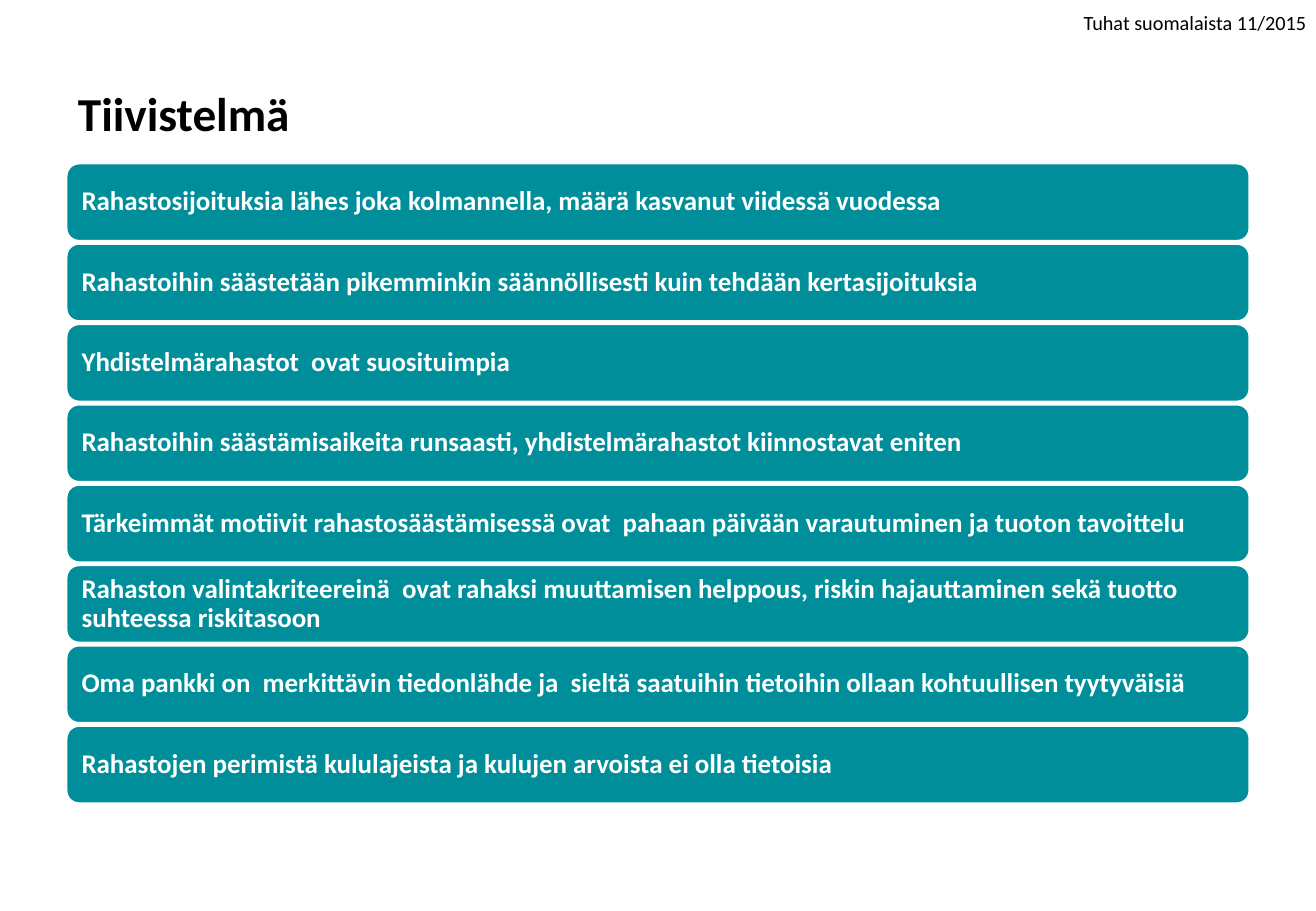
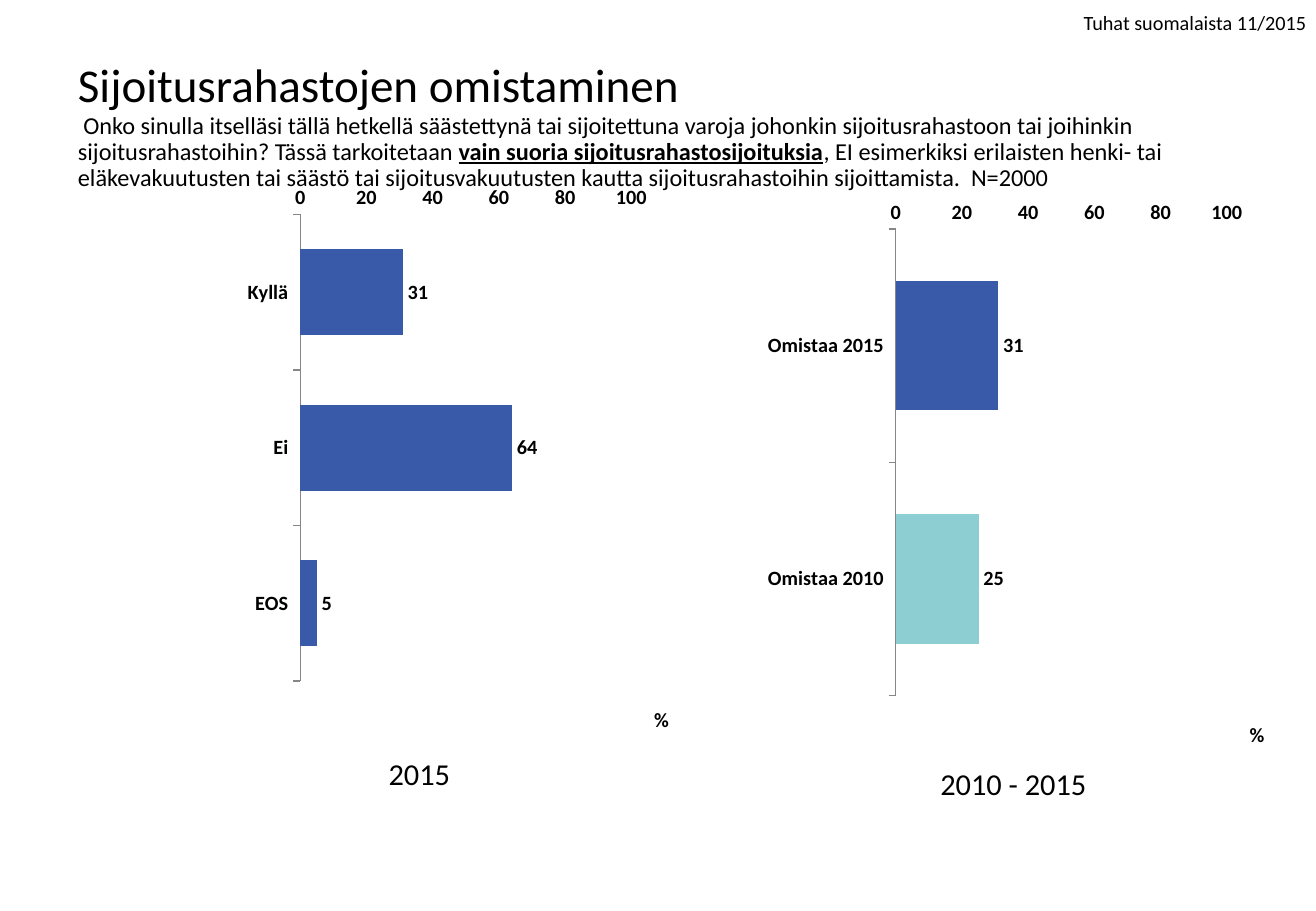
from dataclasses import dataclass

from lxml import etree
from pptx import Presentation
from pptx.chart.data import CategoryChartData
from pptx.dml.color import RGBColor
from pptx.enum.chart import XL_AXIS_CROSSES, XL_CHART_TYPE, XL_LABEL_POSITION, XL_TICK_LABEL_POSITION, XL_TICK_MARK
from pptx.enum.shapes import MSO_SHAPE
from pptx.enum.text import MSO_ANCHOR, MSO_AUTO_SIZE, PP_ALIGN
from pptx.oxml.ns import qn
from pptx.util import Inches, Pt

ROUNDED = MSO_SHAPE.ROUNDED_RECTANGLE
MIDDLE, BOTTOM, LEFT = MSO_ANCHOR.MIDDLE, MSO_ANCHOR.BOTTOM, PP_ALIGN.LEFT
NO_FIT = MSO_AUTO_SIZE.NONE
BAR_CLUSTERED = XL_CHART_TYPE.BAR_CLUSTERED
AXIS_MAXIMUM = XL_AXIS_CROSSES.MAXIMUM
OUTSIDE_END = XL_LABEL_POSITION.OUTSIDE_END
LABELS_LOW = XL_TICK_LABEL_POSITION.LOW
TICK_NONE, TICK_OUT = XL_TICK_MARK.NONE, XL_TICK_MARK.OUTSIDE

FONT = "Calibri"
BLACK, WHITE, GREY = "000000", "FFFFFF", "868686"
TEAL, BLUE, PALE_TEAL = "008F9A", "395AA8", "8DCED2"
TITLE_ONLY = 5

FINDINGS = [
    "Rahastosijoituksia lähes joka kolmannella, määrä kasvanut viidessä vuodessa",
    "Rahastoihin säästetään pikemminkin säännöllisesti kuin tehdään kertasijoituksia",
    "Yhdistelmärahastot  ovat suosituimpia",
    "Rahastoihin säästämisaikeita runsaasti, yhdistelmärahastot kiinnostavat eniten",
    "Tärkeimmät motiivit rahastosäästämisessä ovat  pahaan päivään varautuminen ja tuoton tavoittelu",
    "Rahaston valintakriteereinä  ovat rahaksi muuttamisen helppous, riskin hajauttaminen sekä tuotto "
    "suhteessa riskitasoon",
    "Oma pankki on  merkittävin tiedonlähde ja  sieltä saatuihin tietoihin ollaan kohtuullisen tyytyväisiä",
    "Rahastojen perimistä kululajeista ja kulujen arvoista ei olla tietoisia",
]
QUESTION_START = (
    " Onko sinulla itselläsi tällä hetkellä säästettynä tai sijoitettuna varoja johonkin "
    "sijoitusrahastoon tai joihinkin sijoitusrahastoihin? Tässä tarkoitetaan "
)
QUESTION_END = (
    ", EI esimerkiksi erilaisten henki- tai eläkevakuutusten tai säästö tai sijoitusvakuutusten "
    "kautta sijoitusrahastoihin sijoittamista.  N=2000"
)


@dataclass
class Box:
    """A rectangle whose regions are given in percent of its size."""

    left: int
    top: int
    width: int
    height: int

    def region(self, x, y, width, height):
        """Return the inner rectangle at the given percentages."""
        return Box(
            self.left + round(self.width * x / 100),
            self.top + round(self.height * y / 100),
            round(self.width * width / 100),
            round(self.height * height / 100),
        )

    def edges(self):
        """Return left, top, width and height."""
        return self.left, self.top, self.width, self.height


SLIDE = Box(0, 0, Inches(10.83), Inches(7.5))


def color(code):
    """Turn a hex string into a colour."""
    return RGBColor.from_string(code)


def style_font(font, size, code=BLACK, bold=False):
    """Set the typeface, size, colour and weight."""
    font.name, font.size, font.bold = FONT, Pt(size), bold
    font.color.rgb = color(code)


def add_span(para, text, size, code=BLACK, bold=False, underline=False):
    """Append one formatted run."""
    span = para.add_run()
    span.text = text
    style_font(span.font, size, code, bold)
    if underline:
        span.font.underline = True


def add_label(page, box, text, size, wrap=True):
    """Add a one-line text box."""
    label = page.shapes.add_textbox(*box.edges())
    label.text_frame.word_wrap = wrap
    add_span(label.text_frame.paragraphs[0], text, size)
    return label


def add_page(deck, title_box, anchor):
    """Add a slide and return it with the paragraph of its title."""
    page = deck.slides.add_slide(deck.slide_layouts[TITLE_ONLY])
    title = page.shapes.title
    title.left, title.top, title.width, title.height = title_box.edges()
    frame = title.text_frame
    frame.auto_size, frame.vertical_anchor = NO_FIT, anchor
    para = frame.paragraphs[0]
    para.alignment = LEFT
    return page, para


def add_shared_header(page):
    """Put the header on the layout that all slides use."""
    header = add_label(page, SLIDE.region(81.44, 0.53, 19.02, 4), "Tuhat suomalaista 11/2015", 12, wrap=False)
    page.slide_layout.shapes.element.append(header.element)


def add_findings(page, box, findings):
    """Stack one rounded bar per finding in the box."""
    pitch = 100 / len(findings)
    for row, finding in enumerate(findings):
        bar = page.shapes.add_shape(ROUNDED, *box.region(0, row * pitch, 100, pitch * 0.98).edges())
        bar.shadow.inherit = False
        bar.fill.solid()
        bar.fill.fore_color.rgb = color(TEAL)
        bar.line.color.rgb = color(WHITE)
        bar.line.width = Pt(2)
        frame = bar.text_frame
        frame.word_wrap, frame.vertical_anchor = True, MIDDLE
        frame.margin_left = frame.margin_right = Inches(0.1)
        para = frame.paragraphs[0]
        para.alignment, para.line_spacing = LEFT, 0.9
        add_span(para, finding, 16, WHITE, bold=True)


def set_layout(parent, index, **shares):
    """Place a chart element by shares of the chart's size."""
    for old in parent.findall(qn("c:layout")):
        parent.remove(old)
    layout = etree.Element(qn("c:layout"))
    manual = etree.SubElement(layout, qn("c:manualLayout"))
    for tag, value in shares.items():
        etree.SubElement(manual, qn("c:" + tag)).set("val", str(value))
    parent.insert(index, layout)


def style_axes(chart):
    """Format the category axis and the percent axis."""
    names, percents = chart.category_axis, chart.value_axis
    names.reverse_order = True
    names.crosses = AXIS_MAXIMUM
    names.tick_label_position = LABELS_LOW
    names.major_tick_mark = TICK_OUT
    names.format.line.color.rgb = color(GREY)
    percents.minimum_scale, percents.maximum_scale, percents.major_unit = 0, 100, 20
    percents.has_major_gridlines = False
    percents.major_tick_mark = TICK_NONE
    percents.format.line.fill.background()
    add_span(percents.axis_title.text_frame.paragraphs[0], "%", 12, bold=True)
    set_layout(percents.axis_title.element, 1, xMode="edge", yMode="edge", x=0.89, y=0.73)


def add_bar_chart(page, box, names, values, codes, caption, caption_spot):
    """Add a bar chart with its caption below the axis."""
    data = CategoryChartData()
    data.categories = names
    data.add_series("Series 1", values)
    chart = page.shapes.add_chart(BAR_CLUSTERED, *box.edges(), data).chart
    chart.has_legend = chart.has_title = False
    style_font(chart.font, 12, bold=True)
    set_layout(
        chart.element.xpath("c:chart/c:plotArea")[0], 0, layoutTarget="inner",
        xMode="edge", yMode="edge", x=0.34, y=0.05, w=0.52, h=0.65,
    )
    style_axes(chart)
    plot = chart.plots[0]
    plot.gap_width, plot.vary_by_categories = 80, False
    plot.has_data_labels = True
    plot.data_labels.show_value = True
    plot.data_labels.position = OUTSIDE_END
    for index, code in enumerate(codes):
        fill = plot.series[0].points[index].format.fill
        fill.solid()
        fill.fore_color.rgb = color(code)
    add_label(page, box.region(*caption_spot, 30.34, 6.77), caption, 18)


def build_summary(deck):
    """Build the slide of findings."""
    page, para = add_page(deck, SLIDE.region(5, 4, 90, 16.67), MIDDLE)
    add_span(para, "Tiivistelmä", 28, bold=True)
    add_shared_header(page)
    add_findings(page, SLIDE.region(5, 17.87, 90, 70.56), FINDINGS)


def build_ownership(deck):
    """Build the slide with the two ownership charts."""
    page, para = add_page(deck, SLIDE.region(5, 8, 95, 13.73), BOTTOM)
    para.line_spacing = 0.9
    add_span(para, "Sijoitusrahastojen omistaminen", 27.9)
    para.add_line_break()
    add_span(para, QUESTION_START, 14.4)
    add_span(para, "vain suoria sijoitusrahastosijoituksia", 14.4, bold=True, underline=True)
    add_span(para, QUESTION_END, 14.4)
    add_bar_chart(
        page, SLIDE.region(6.37, 19.6, 48.38, 78.8), ["Kyllä", "Ei", "EOS"],
        [31, 64, 5], [BLUE] * 3, "2015", (46, 79.53),
    )
    add_bar_chart(
        page, SLIDE.region(51.62, 21.2, 48.38, 78.8), ["Omistaa 2015", "Omistaa 2010"],
        [31, 25], [BLUE, PALE_TEAL], "2010 - 2015", (39.12, 78.85),
    )


def main():
    """Build and save the deck."""
    deck = Presentation()
    deck.slide_width, deck.slide_height = SLIDE.width, SLIDE.height
    build_summary(deck)
    build_ownership(deck)
    deck.save("out.pptx")


if __name__ == "__main__":
    main()
